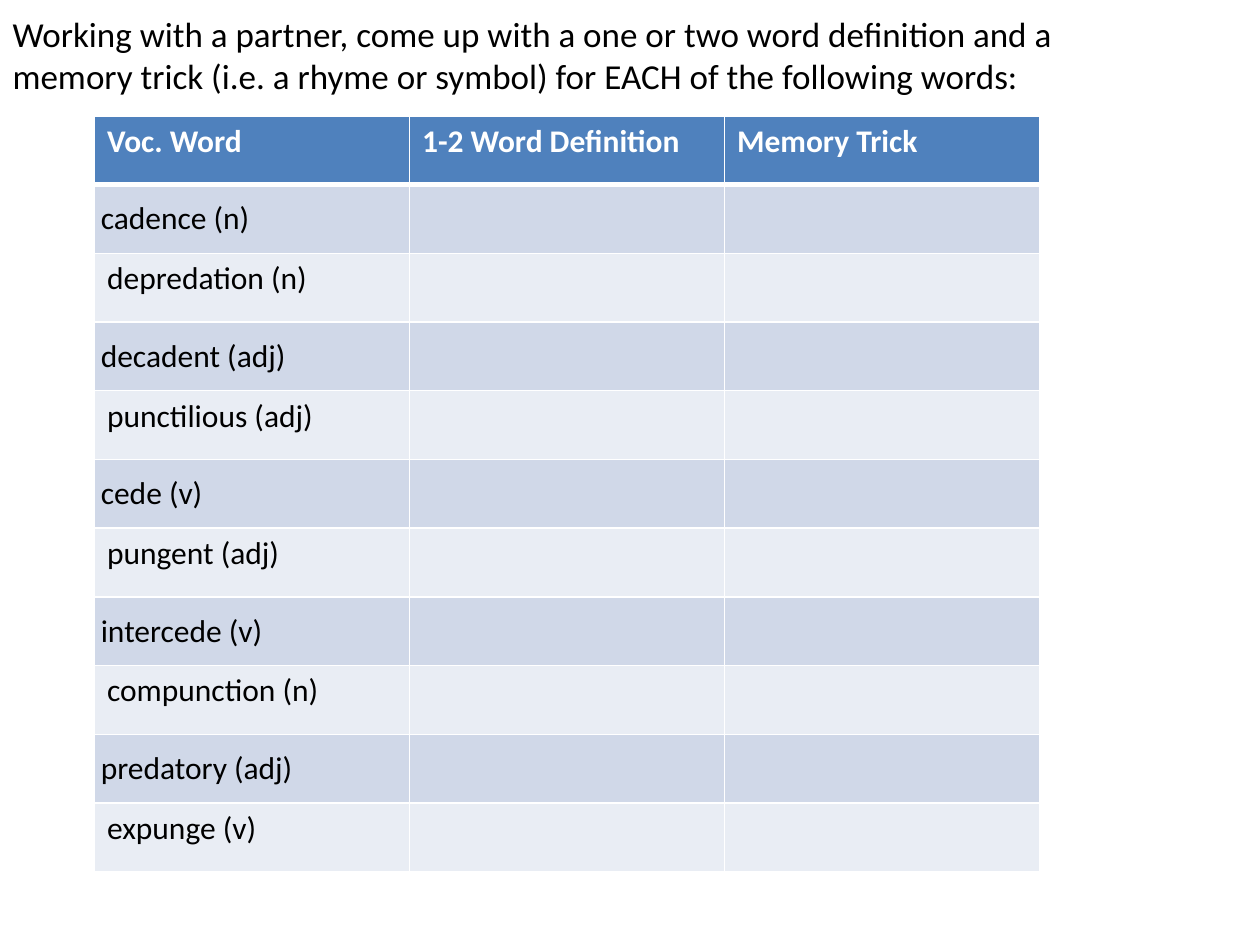
from dataclasses import dataclass

from lxml import etree
from pptx import Presentation
from pptx.dml.color import RGBColor
from pptx.enum import text
from pptx.oxml import ns
from pptx.util import Inches, Pt


@dataclass(frozen=True)
class Theme:
    font: str = "Calibri"
    ink: str = "000000"
    white: str = "FFFFFF"
    head: str = "4F81BD"
    dark: str = "D0D8E8"
    light: str = "E9EDF4"
    title: int = 20
    body: int = 18


@dataclass(frozen=True)
class Row:
    words: tuple
    fill: str
    color: str
    bold: bool = False
    tight: bool = False
    top: int = 1
    base: int = 1


THEME = Theme()
TITLE = (
    "Working with a partner, come up with a one or two word definition and a "
    "memory trick (i.e. a rhyme or symbol) for EACH of the following words:"
)
HEADS = ("Voc. Word", "1-2 Word Definition", "Memory Trick")
VOCAB = (
    "cadence (n)",
    "depredation (n)",
    "decadent (adj)",
    "punctilious (adj)",
    "cede (v)",
    "pungent (adj)",
    "intercede (v)",
    "compunction (n)",
    "predatory (adj)",
    "expunge (v)",
)


def write(frame, words: str, *, size: int, color: str, bold: bool = False) -> None:
    para = frame.paragraphs[0]
    para.alignment = text.PP_ALIGN.LEFT
    run = para.add_run()
    run.text = words
    font = run.font
    font.name = THEME.font
    font.size = Pt(size)
    font.bold = bold
    font.color.rgb = RGBColor.from_string(color)


def edge(cell, side: str, width: int) -> None:
    props = cell._tc.get_or_add_tcPr()
    line = etree.SubElement(props, ns.qn(f"a:ln{side}"), w=str(Pt(width)))
    fill = etree.SubElement(line, ns.qn("a:solidFill"))
    etree.SubElement(fill, ns.qn("a:srgbClr"), val=THEME.white)


def draw_cell(cell, words: str, row: Row) -> None:
    for side, width in (("L", 1), ("R", 1), ("T", row.top), ("B", row.base)):
        edge(cell, side, width)
    cell.fill.solid()
    cell.fill.fore_color.rgb = RGBColor.from_string(row.fill)
    if not words:
        return
    if row.tight:
        cell.vertical_anchor = text.MSO_ANCHOR.MIDDLE
        cell.margin_left = cell.margin_right = Inches(0.05)
        cell.margin_top = cell.margin_bottom = 0
    write(cell.text_frame, words, size=THEME.body, color=row.color, bold=row.bold)


def draw_title(slide) -> None:
    title = slide.shapes.title
    title.left, title.top = Inches(0), Inches(0.03)
    title.width, title.height = Inches(9), Inches(0.8)
    frame = title.text_frame
    frame.word_wrap = True
    frame.auto_size = text.MSO_AUTO_SIZE.NONE
    frame.vertical_anchor = text.MSO_ANCHOR.MIDDLE
    write(frame, TITLE, size=THEME.title, color=THEME.ink)


def draw_table(slide, rows: list[Row]) -> None:
    table = slide.shapes.add_table(
        len(rows), len(HEADS), Inches(0.75), Inches(0.92), Inches(7.5), Inches(6)
    ).table
    for line, row in zip(table.rows, rows):
        for cell, words in zip(line.cells, row.words):
            draw_cell(cell, words, row)


def main() -> None:
    deck = Presentation()
    deck.slide_width, deck.slide_height = Inches(10), Inches(7.5)
    slide = deck.slides.add_slide(deck.slide_layouts[5])
    rows = [Row(HEADS, THEME.head, THEME.white, bold=True, base=3)]
    for i, word in enumerate(VOCAB):
        odd = i % 2 == 0
        rows.append(
            Row(
                (word, "", ""),
                THEME.dark if odd else THEME.light,
                THEME.ink,
                tight=odd,
                top=3 if i == 0 else 1,
            )
        )
    draw_title(slide)
    draw_table(slide, rows)
    deck.save("out.pptx")


if __name__ == "__main__":
    main()
